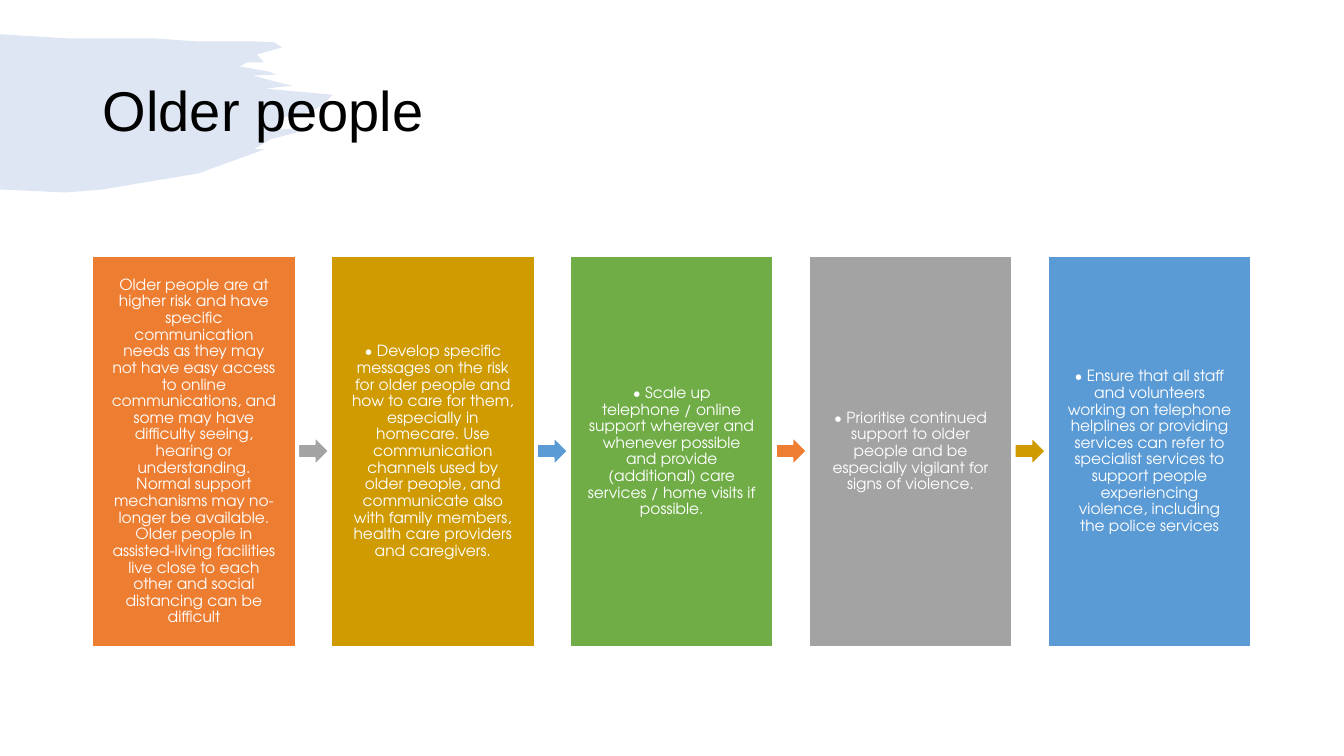
from pptx import Presentation
from pptx.dml.color import RGBColor
from pptx.enum.shapes import MSO_SHAPE
from pptx.enum.text import MSO_ANCHOR, PP_ALIGN
from pptx.oxml.ns import qn
from pptx.util import Pt

RECTANGLE = MSO_SHAPE.RECTANGLE
RIGHT_ARROW = MSO_SHAPE.RIGHT_ARROW
MIDDLE = MSO_ANCHOR.MIDDLE
CENTER = PP_ALIGN.CENTER
LEFT = PP_ALIGN.LEFT

COLOURS = {
    "orange": "ED7D31",
    "gold": "CF9B00",
    "green": "70AD47",
    "grey": "A3A3A3",
    "blue": "5B9BD5",
    "brush": "5A82CB",
    "white": "FFFFFF",
    "black": "000000",
}

BRUSH_OUTLINE = [
    (0, 34), (66, 38), (151, 38), (194, 41), (248, 41), (272, 42), (280, 47),
    (255, 54), (262, 62), (245, 62), (238, 66), (266, 71), (275, 74), (251, 75),
    (273, 81), (290, 85), (263, 88), (330, 94), (318, 106), (307, 111),
    (283, 116), (274, 128), (308, 128), (269, 138), (252, 148), (263, 148),
    (197, 172), (102, 188), (65, 191), (0, 188),
]

STEPS = [
    ("orange", "grey", "Older people are at higher risk and have specific communication needs as they may "
     "not have easy access to online communications, and some may have difficulty seeing, hearing or "
     "understanding. Normal support mechanisms may no-longer be available. Older people in "
     "assisted-living facilities live close to each other and social distancing can be difficult"),
    ("gold", "blue", "• Develop specific messages on the risk for older people and how to care for them, "
     "especially in homecare. Use communication channels used by older people, and communicate also "
     "with family members, health care providers and caregivers."),
    ("green", "orange", "• Scale up telephone / online support wherever and whenever possible and provide "
     "(additional) care services / home visits if possible."),
    ("grey", "gold", "• Prioritise continued support to older people and be especially vigilant for "
     "signs of violence."),
    ("blue", None, "• Ensure that all staff and volunteers working on telephone helplines or providing "
     "services can refer to specialist services to support people experiencing violence, including "
     "the police services"),
]

FIRST_LEFT, STEP_PITCH = 66.24, 170.64
ARROW_OFFSET = 146.88


def write_text(box, text, font, size, colour, alignment, margins):
    frame = box.text_frame
    frame_format = {"word_wrap": True, "vertical_anchor": MIDDLE, **margins}
    for name, value in frame_format.items():
        setattr(frame, name, value)
    para = frame.paragraphs[0]
    para_format = {"alignment": alignment, "line_spacing": 0.9, "space_before": Pt(0)}
    for name, value in para_format.items():
        setattr(para, name, value)
    span = para.add_run()
    span.text = text
    span_format = {"name": font, "size": Pt(size), "bold": False}
    for name, value in span_format.items():
        setattr(span.font, name, value)
    span.font.color.rgb = RGBColor.from_string(COLOURS[colour])


def add_block(kind, left, top, width, height, colour):
    block = page.shapes.add_shape(kind, Pt(left), Pt(top), Pt(width), Pt(height))
    block.shadow.inherit = False
    block.fill.solid()
    block.fill.fore_color.rgb = RGBColor.from_string(COLOURS[colour])
    block.line.color.rgb = RGBColor.from_string(COLOURS["white"])
    block.line.width = Pt(1)
    return block


deck = Presentation()
deck.slide_width, deck.slide_height = Pt(960), Pt(540)
page = deck.slides.add_slide(deck.slide_layouts[5])

builder = page.shapes.build_freeform(*BRUSH_OUTLINE[0], scale=Pt(0.72))
builder.add_line_segments(BRUSH_OUTLINE[1:], close=True)
brush = builder.convert_to_shape()
brush.shadow.inherit = False
brush.fill.solid()
brush.fill.fore_color.rgb = RGBColor.from_string(COLOURS["brush"])
brush.line.fill.background()
brush_colour = brush.element.spPr.find(qn("a:solidFill")).find(qn("a:srgbClr"))
brush_colour.append(brush_colour.makeelement(qn("a:alpha"), {"val": "20000"}))

title = page.shapes.title
title.element.addprevious(brush.element)
title_place = {"left": Pt(66.24), "top": Pt(28.8), "width": Pt(828), "height": Pt(104.4)}
for name, value in title_place.items():
    setattr(title, name, value)
write_text(title, "Older people", "Arial", 40, "black", LEFT, {})

step_margins = dict.fromkeys(("margin_left", "margin_top", "margin_right", "margin_bottom"), Pt(12.24))
for index, (colour, arrow_colour, text) in enumerate(STEPS):
    left = FIRST_LEFT + index * STEP_PITCH
    step = add_block(RECTANGLE, left, 182.88, 144.72, 279.36, colour)
    write_text(step, text, "TeX Gyre Adventor", 11, "white", CENTER, step_margins)
    if arrow_colour:
        add_block(RIGHT_ARROW, left + ARROW_OFFSET, 312.48, 21.6, 19.44, arrow_colour)

deck.save("out.pptx")
